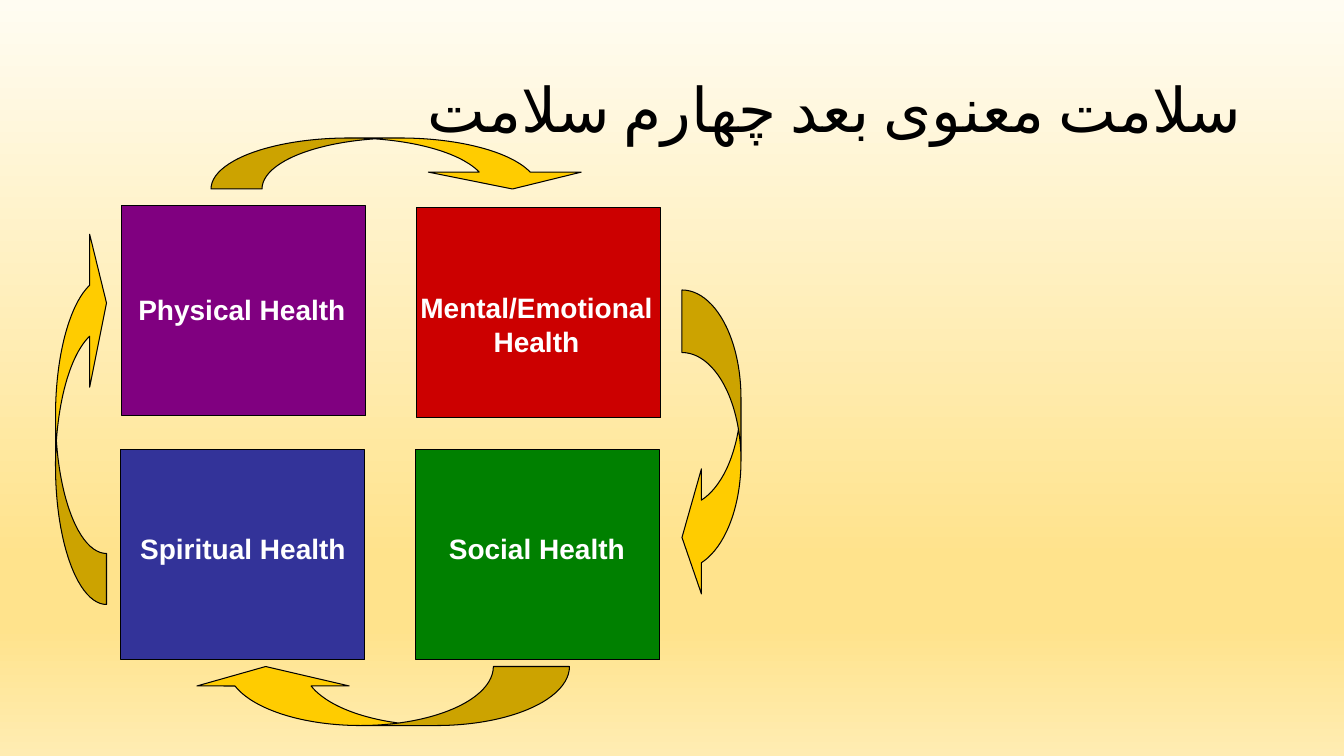
"""Build a slide on spiritual health as the fourth dimension of health."""
from copy import deepcopy

from lxml.etree import SubElement
from pptx import Presentation
from pptx.dml.color import RGBColor
from pptx.enum.shapes import MSO_SHAPE
from pptx.enum.text import MSO_ANCHOR, MSO_AUTO_SIZE, PP_ALIGN
from pptx.oxml.ns import qn
from pptx.util import Pt

PX = 12192000 / 1344
BLACK = RGBColor(0x00, 0x00, 0x00)
WHITE = RGBColor(0xFF, 0xFF, 0xFF)
PURPLE = RGBColor(0x80, 0x00, 0x80)
RED = RGBColor(0xCC, 0x00, 0x00)
INDIGO = RGBColor(0x33, 0x33, 0x99)
GREEN = RGBColor(0x00, 0x80, 0x00)
GOLD = RGBColor(0xFF, 0xCC, 0x00)
CREAM = RGBColor(0xFF, 0xFC, 0xF2)
SAND = RGBColor(0xFF, 0xE3, 0x8C)
PALE_SAND = RGBColor(0xFF, 0xEC, 0xB2)

BACKDROP = [(0, CREAM), (0.74, SAND), (0.83, SAND), (1, PALE_SAND)]
HEADING = "سلامت معنوی بعد چهارم سلامت"
HEADING_BOX = (93, 40, 1159, 146)
TILE_SIZE = (244, 210)
DIMENSIONS = [
    ("Physical Health", PURPLE, (122, 206), (122, 288, 240, 43)),
    ("Mental/Emotional Health", RED, (417, 208), (398, 286, 277, 78)),
    ("Spiritual Health", INDIGO, (121, 450), (121, 527, 244, 43)),
    ("Social Health", GREEN, (416, 450), (415, 527, 244, 43)),
]
DOWN, LEFT = MSO_SHAPE.CURVED_DOWN_ARROW, MSO_SHAPE.CURVED_LEFT_ARROW
CYCLE = [
    (DOWN, (211, 138, 378, 51), 0, 1.5),
    (LEFT, (682, 290, 59, 310), 0, 1.06),
    (LEFT, (350, 506, 59, 380), 90, 1.29),
    (DOWN, (-108, 390, 378, 51), 270, 1.5),
]
ARROW_HEAD = 0.33


def emu(lengths):
    return [round(length * PX) for length in lengths]


def write(frame, text, *, size, font, color, align, bold=False, rtl=False):
    frame.word_wrap = True
    paragraph = frame.paragraphs[0]
    paragraph.alignment = align
    run = paragraph.add_run()
    run.text = text
    run.font.size = Pt(size)
    run.font.name = font
    run.font.bold = bold
    run.font.color.rgb = color
    if rtl:
        paragraph._p.get_or_add_pPr().set("rtl", "1")
        properties = run._r.get_or_add_rPr()
        properties.set("lang", "fa-IR")
        SubElement(properties, qn("a:cs")).set("typeface", font)
    return paragraph


def draw(slide, kind, box, color):
    outline = slide.shapes.add_shape(kind, *emu(box))
    outline.shadow.inherit = False
    outline.fill.solid()
    outline.fill.fore_color.rgb = color
    outline.line.color.rgb = BLACK
    outline.line.width = Pt(0.75)
    return outline


def paint_backdrop(slide):
    fill = slide.background.fill
    fill.gradient()
    fill.gradient_angle = 270
    stop_list = slide.element.xpath(".//a:gsLst")[0]
    for _ in BACKDROP[2:]:
        stop_list.append(deepcopy(stop_list[0]))
    for stop, (position, color) in zip(fill.gradient_stops, BACKDROP):
        stop.position = position
        stop.color.rgb = color


def add_heading(slide):
    heading = slide.shapes.title
    heading.left, heading.top, heading.width, heading.height = emu(HEADING_BOX)
    frame = heading.text_frame
    frame.auto_size = MSO_AUTO_SIZE.NONE
    frame.vertical_anchor = MSO_ANCHOR.MIDDLE
    paragraph = write(frame, HEADING, size=44, font="Calibri", color=BLACK,
                      align=PP_ALIGN.RIGHT, rtl=True)
    paragraph.line_spacing = 0.9


def add_dimensions(slide):
    for name, color, corner, label_box in DIMENSIONS:
        draw(slide, MSO_SHAPE.RECTANGLE, corner + TILE_SIZE, color)
        label = slide.shapes.add_textbox(*emu(label_box)).text_frame
        label.auto_size = MSO_AUTO_SIZE.SHAPE_TO_FIT_TEXT
        write(label, name, size=20, font="Arial", color=WHITE,
              align=PP_ALIGN.CENTER, bold=True)


def add_cycle(slide):
    for kind, box, turn, thickness in CYCLE:
        arrow = draw(slide, kind, box, GOLD)
        arrow.rotation = turn
        for index, value in enumerate((thickness, 2 * thickness, ARROW_HEAD)):
            arrow.adjustments[index] = value


def main():
    deck = Presentation()
    deck.slide_width, deck.slide_height = emu((1344, 756))
    slide = deck.slides.add_slide(deck.slide_layouts[5])
    paint_backdrop(slide)
    add_heading(slide)
    add_dimensions(slide)
    add_cycle(slide)
    deck.save("out.pptx")


if __name__ == "__main__":
    main()
